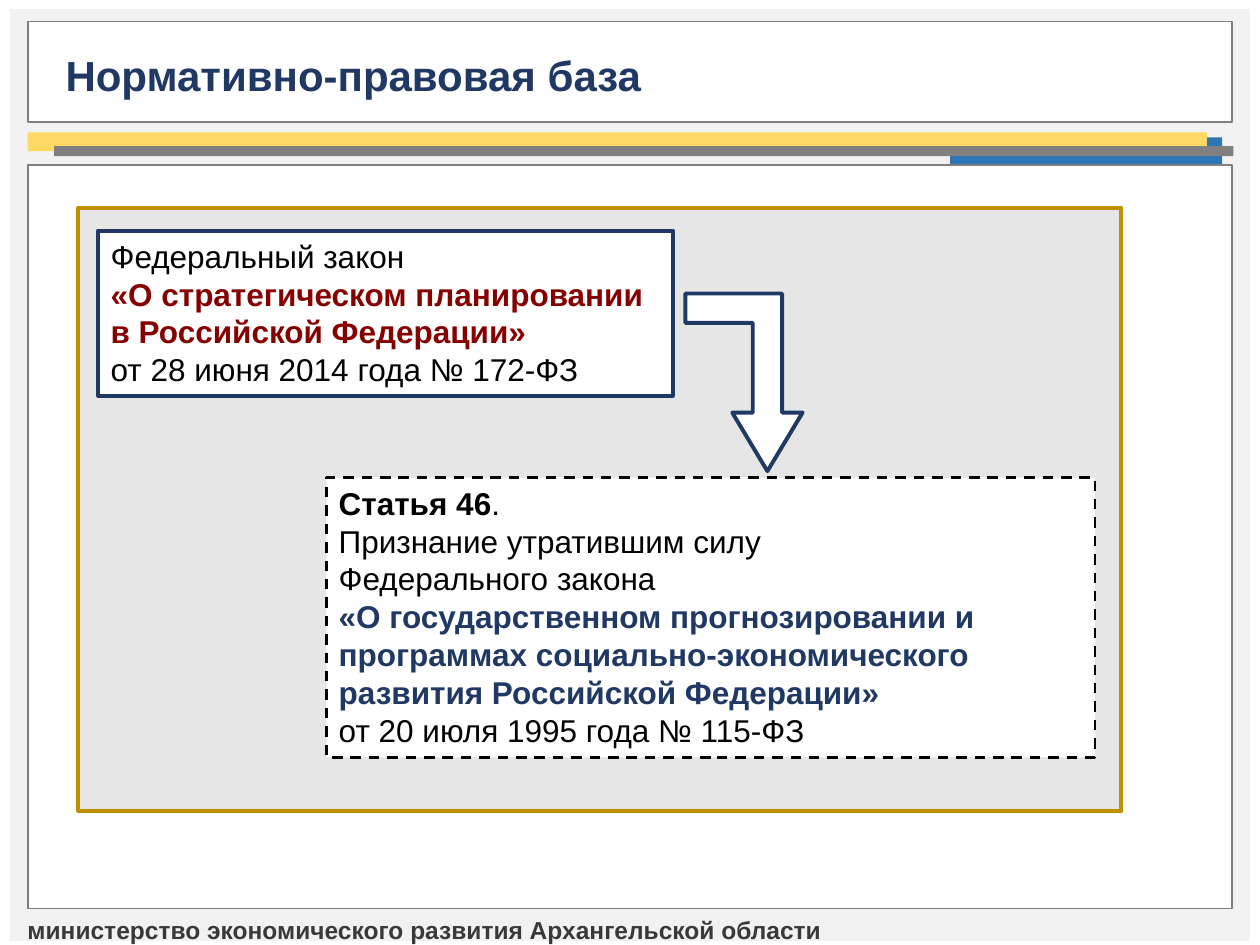
from pptx import Presentation
from pptx import util as u
from pptx.dml.color import RGBColor
from pptx.enum import dml, shapes, text

NAVY = RGBColor(0x20, 0x38, 0x64)
BLUE = RGBColor(0x2E, 0x75, 0xB6)
YELLOW = RGBColor(0xFF, 0xD9, 0x66)
GOLD = RGBColor(0xBF, 0x90, 0x00)
DARK_RED = RGBColor(0x86, 0x00, 0x00)
BLACK = RGBColor(0, 0, 0)
WHITE = RGBColor(0xFF, 0xFF, 0xFF)
PALE = RGBColor(0xF2, 0xF2, 0xF2)
LIGHT = RGBColor(0xE7, 0xE6, 0xE6)
GRAY = RGBColor(0x80, 0x80, 0x80)
FRAME = RGBColor(0x7F, 0x7F, 0x7F)
CHARCOAL = RGBColor(0x3B, 0x38, 0x38)

RECT = shapes.MSO_SHAPE.RECTANGLE
PROCESS = shapes.MSO_SHAPE.FLOWCHART_PROCESS
ARROW = shapes.MSO_SHAPE.BENT_UP_ARROW

deck = Presentation()
deck.slide_width, deck.slide_height = u.Inches(10), u.Inches(7.5)
page = deck.slides.add_slide(deck.slide_layouts[5])


def draw(kind, place, fill, line=None, width=1):
    box = page.shapes.add_shape(kind, *map(u.Inches, place))
    box.shadow.inherit = False
    box.fill.solid()
    box.fill.fore_color.rgb = fill
    if line is None:
        box.line.fill.background()
    else:
        box.line.color.rgb = line
        box.line.width = u.Pt(width)
    return box


def write(para, words, size=18, color=BLACK, bold=False):
    para.alignment = text.PP_ALIGN.LEFT
    for index, piece in enumerate(words.split("\n")):
        if index:
            para.add_line_break()
        if piece:
            span = para.add_run()
            span.text = piece
            span.font.name = "Arial"
            span.font.size = u.Pt(size)
            span.font.bold = bold
            span.font.color.rgb = color


margin, inner = 0.22, 9.56
draw(PROCESS, (0.08, 0.07, 9.84, 7.4), PALE)
draw(PROCESS, (margin, 0.17, inner, 0.8), WHITE, FRAME)
draw(RECT, (7.54, 1.09, 2.16, 0.25), BLUE)
draw(RECT, (margin, 1.05, 9.36, 0.15), YELLOW)
draw(RECT, (0.43, 1.16, 9.36, 0.08), GRAY)
draw(PROCESS, (margin, 1.31, inner, 5.9), WHITE, FRAME)

title = page.shapes.title
page.shapes.element.append(title.element)
title.left, title.top, title.width, title.height = map(u.Inches, (0.42, 0.34, 4.91, 0.5))
footer = page.shapes.add_textbox(*map(u.Inches, (0.12, 7.21, 6.54, 0.34)))
for box, words, size, color in (
    (title, "Нормативно-правовая база", 24, NAVY),
    (footer, "министерство экономического развития Архангельской области", 14, CHARCOAL),
):
    box.text_frame.word_wrap = False
    box.text_frame.auto_size = text.MSO_AUTO_SIZE.SHAPE_TO_FIT_TEXT
    box.text_frame.vertical_anchor = text.MSO_ANCHOR.TOP
    write(box.text_frame.paragraphs[0], words, size=size, color=color, bold=True)

draw(RECT, (0.62, 1.65, 8.28, 4.79), LIGHT, GOLD, 2.25)
law = draw(RECT, (0.78, 1.83, 4.56, 1.31), WHITE, NAVY, 2.25)
article = draw(RECT, (2.59, 3.79, 6.1, 2.22), WHITE, BLACK, 1.5)
article.line.dash_style = dml.MSO_LINE.DASH
for box in (law, article):
    box.text_frame.word_wrap = True
    box.text_frame.auto_size = text.MSO_AUTO_SIZE.SHAPE_TO_FIT_TEXT
    box.text_frame.vertical_anchor = text.MSO_ANCHOR.TOP

para = law.text_frame.paragraphs[0]
write(para, "Федеральный закон \n")
write(para, "«О стратегическом планировании в Российской Федерации» \n", color=DARK_RED, bold=True)
write(para, "от 28 июня 2014 года № 172-ФЗ")

para = article.text_frame.paragraphs[0]
write(para, "Статья 46", bold=True)
write(para, ".")
para = article.text_frame.add_paragraph()
write(para, "Признание утратившим силу \nФедерального закона \n")
write(
    para,
    "«О государственном прогнозировании и программах социально-экономического "
    "развития Российской Федерации» \n",
    color=NAVY,
    bold=True,
)
write(para, "от 20 июля 1995 года № 115-ФЗ")

arrow = draw(ARROW, (5.44, 2.33, 0.93, 1.41), WHITE, NAVY, 2.25)
for index, share in enumerate((0.25, 0.3, 0.5)):
    arrow.adjustments[index] = share
arrow.element.spPr.xfrm.set("flipV", "1")

deck.save("out.pptx")
